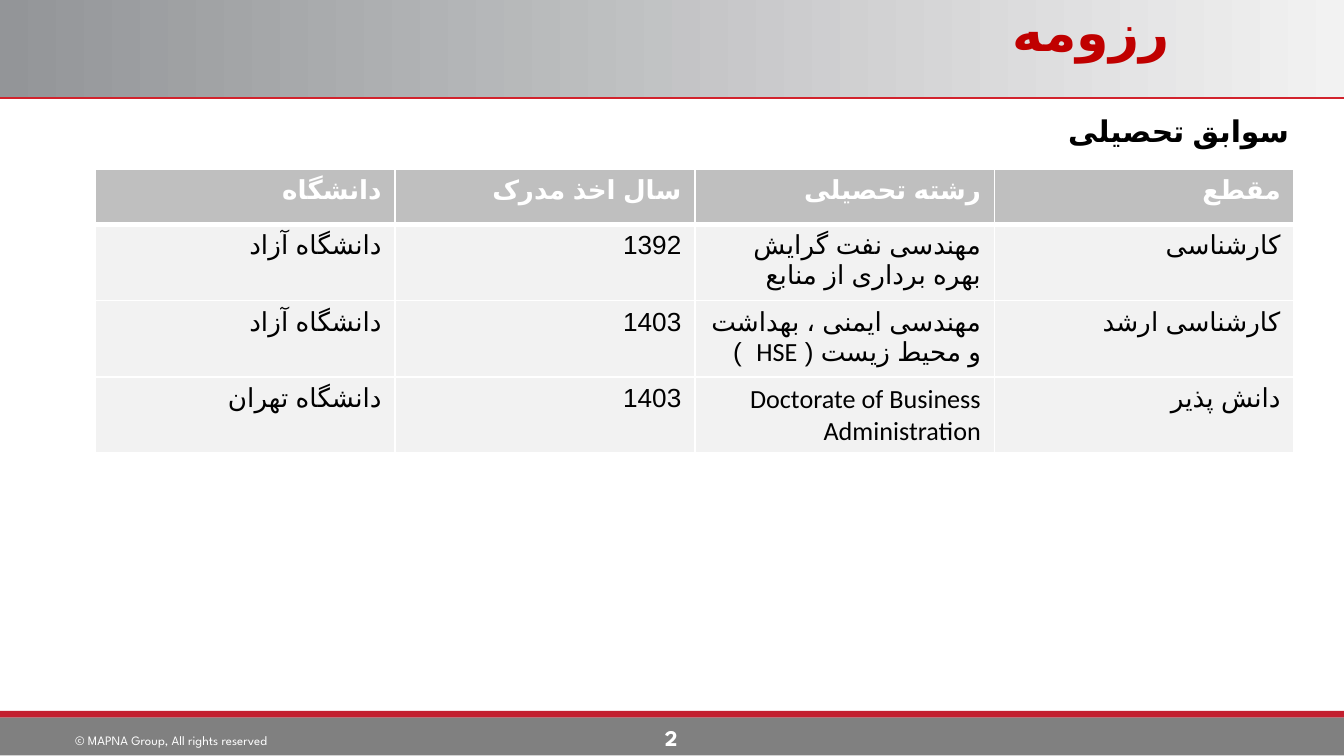
from lxml import etree
from pptx import Presentation
from pptx.dml.color import RGBColor
from pptx.enum.lang import MSO_LANGUAGE_ID
from pptx.enum.shapes import MSO_CONNECTOR, MSO_SHAPE
from pptx.enum.text import MSO_ANCHOR, PP_ALIGN
from pptx.oxml.ns import qn
from pptx.util import Inches, Pt

RECTANGLE = MSO_SHAPE.RECTANGLE
STRAIGHT = MSO_CONNECTOR.STRAIGHT
TOP, MIDDLE = MSO_ANCHOR.TOP, MSO_ANCHOR.MIDDLE
CENTER, RIGHT = PP_ALIGN.CENTER, PP_ALIGN.RIGHT
PERSIAN = MSO_LANGUAGE_ID.FARSI


def color(value):
    return RGBColor.from_string(value)


def write(frame, text, size, font, hex_color, bold, align):
    frame.word_wrap = True
    paragraph = frame.paragraphs[0]
    paragraph.alignment = align
    run = paragraph.add_run()
    run.text = text
    run.font.size = Pt(size)
    run.font.name = font
    run.font.bold = bold
    run.font.color.rgb = color(hex_color)
    if align == RIGHT:
        paragraph._p.get_or_add_pPr().set("rtl", "1")
        run.font.language_id = PERSIAN
        etree.SubElement(run.font._element, qn("a:cs"), typeface="Arial")
    return run


presentation = Presentation()
presentation.slide_width = Inches(10)
presentation.slide_height = Inches(5.625)
slide = presentation.slides.add_slide(presentation.slide_layouts[6])

bands = [(0, 0.73, None), (5.29, 0.05, "C31F2F"), (5.34, 0.28, "808080")]
for top, height, fill in bands:
    band = slide.shapes.add_shape(RECTANGLE, 0, Inches(top), Inches(10), Inches(height))
    band.shadow.inherit = False
    band.line.fill.background()
    if fill:
        band.fill.solid()
        band.fill.fore_color.rgb = color(fill)
    else:
        band.fill.gradient()
        band.fill.gradient_angle = 0
        for stop, shade in zip(band.fill.gradient_stops, ("939598", "F2F2F2")):
            stop.color.rgb = color(shade)

header_line = slide.shapes.add_connector(STRAIGHT, 0, Inches(0.73), Inches(10), Inches(0.73))
header_line.line.color.rgb = color("D2232D")
header_line.line.width = Pt(0.75)
etree.SubElement(header_line._element.spPr, qn("a:effectLst"))

texts = [
    (0.17, 5.41, 2.21, 0.24, 0.1, MIDDLE, "© MAPNA Group, All rights reserved", 12, "League Spartan", "FFFFFF", False, CENTER),
    (4.58, 5.34, 0.83, 0.3, 0.1, MIDDLE, "2", 12, "League Spartan", "FFFFFF", True, CENTER),
    (0.42, 0.1, 8.83, 0.25, 0.55, MIDDLE, "رزومه", 28, "Calibri", "C00000", True, RIGHT),
    (1.19, 0.79, 8.5, 0.42, 0.1, TOP, "سوابق تحصیلی", 16, "Calibri", "000000", True, RIGHT),
]
for left, top, width, height, right_margin, anchor, *content in texts:
    box = slide.shapes.add_textbox(Inches(left), Inches(top), Inches(width), Inches(height))
    box.text_frame.vertical_anchor = anchor
    box.text_frame.margin_right = Inches(right_margin)
    run = write(box.text_frame, *content)
    if content[0].startswith("©"):
        run.font._element.set("baseline", "30000")

rows = [
    ["دانشگاه", "سال اخذ مدرک", "رشته تحصیلی", "مقطع"],
    ["دانشگاه آزاد", "1392", "مهندسی نفت گرایش بهره برداری از منابع", "کارشناسی"],
    ["دانشگاه آزاد", "1403", "مهندسی ایمنی ، بهداشت و محیط زیست ( HSE  )", "کارشناسی ارشد"],
    ["دانشگاه تهران", "1403", "Doctorate of Business Administration", "دانش پذیر"],
]
table = slide.shapes.add_table(
    4, 4, Inches(0.71), Inches(1.26), Inches(8.92), Inches(1.64)
).table
for column in table.columns:
    column.width = Inches(2.23)
for row_index, values in enumerate(rows):
    table.rows[row_index].height = Inches(0.41)
    is_header = row_index == 0
    for column_index, value in enumerate(values):
        cell = table.cell(row_index, column_index)
        write(cell.text_frame, value, 14, "Calibri", "FFFFFF" if is_header else "000000", is_header, RIGHT)
        properties = cell._tc.get_or_add_tcPr()
        for side in ("lnL", "lnR", "lnT", "lnB"):
            thick = (is_header and side == "lnB") or (row_index == 1 and side == "lnT")
            border = etree.SubElement(properties, qn(f"a:{side}"), w=str(Pt(3 if thick else 1)))
            border_fill = etree.SubElement(border, qn("a:solidFill"))
            etree.SubElement(border_fill, qn("a:srgbClr"), val="FFFFFF")
        cell.fill.solid()
        cell.fill.fore_color.rgb = color("BFBFBF" if is_header else "F2F2F2")

presentation.save("out.pptx")
